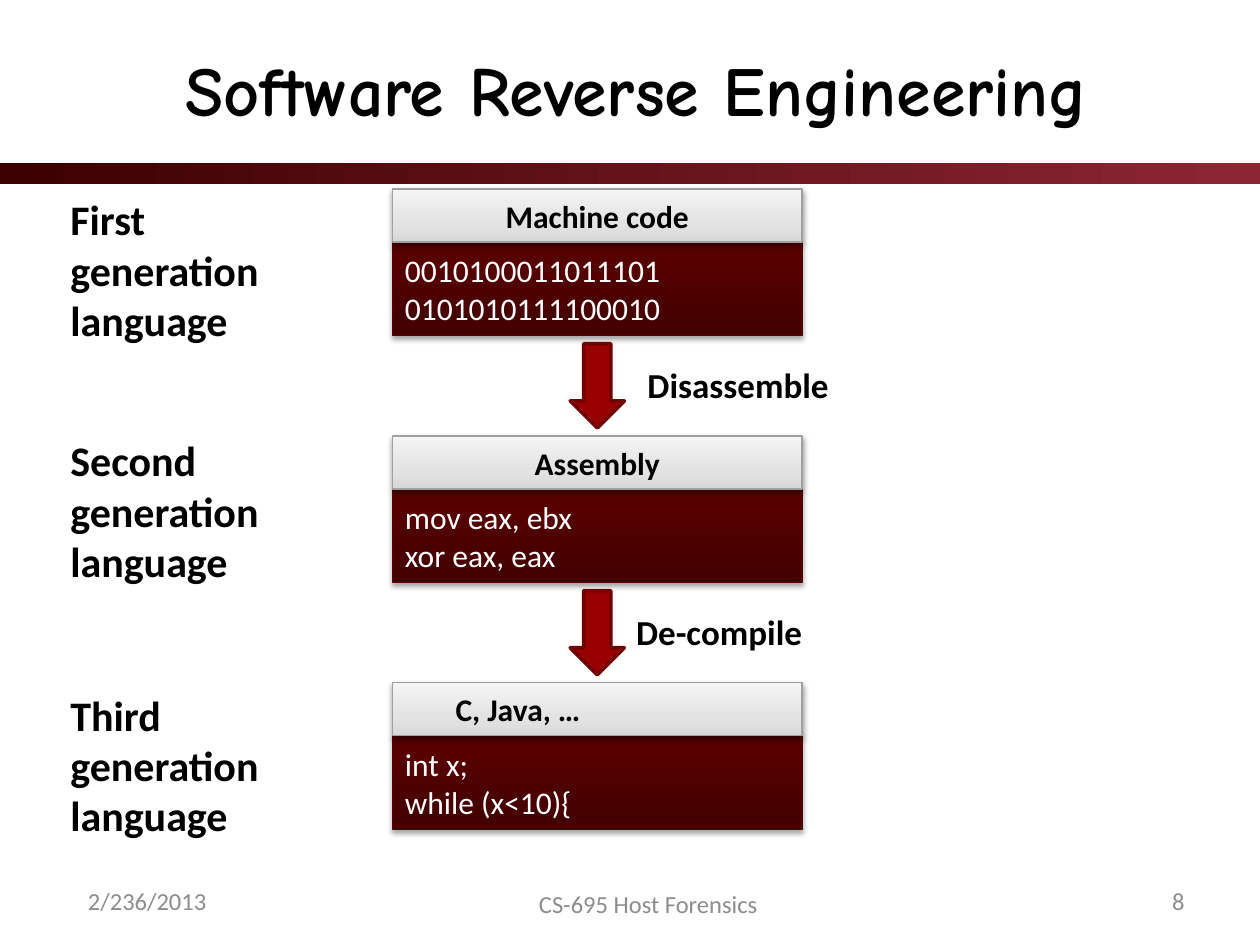
from lxml.etree import SubElement
from pptx import Presentation
from pptx.dml.color import RGBColor
from pptx.enum.shapes import MSO_SHAPE
from pptx.enum.text import MSO_ANCHOR, PP_ALIGN
from pptx.oxml import parse_xml
from pptx.oxml.ns import nsdecls, qn
from pptx.util import Pt

THEME = {
    "font": "Calibri", "title_font": "Comic Neue",
    "black": "000000", "white": "FFFFFF", "gray": "8C8C8C",
    "arrow": "990000", "arrow_line": "710000",
    "code_line": "570000", "head_line": "A0A0A0",
    "bar": [(0, "3C0000"), (100, "8C2633")],
    "code": [(0, "420000"), (80, "560000"), (100, "570000")],
    "head": [(0, "D8D8D8"), (35, "E3E3E3"), (100, "F4F4F4")],
    "title_size": 40, "label_size": 24, "step_size": 20,
    "box_size": 18, "footer_size": 14,
}


def write(s, lines, size, color="black", font="font", bold=False,
          align=PP_ALIGN.LEFT, anchor=MSO_ANCHOR.MIDDLE, wrap=True, left=7.2):
    tf = s.text_frame
    tf.word_wrap = wrap
    tf.vertical_anchor = anchor
    tf.margin_left = Pt(left)
    for i, line in enumerate(lines):
        p = tf.paragraphs[0] if i == 0 else tf.add_paragraph()
        p.alignment = align
        r = p.add_run()
        r.text = line
        r.font.name = THEME[font]
        r.font.size = Pt(THEME[size])
        r.font.bold = bold
        r.font.color.rgb = RGBColor.from_string(THEME[color])


def add_box(left, top, width, height, stops, angle, line=None, shadow=None):
    """Add a gradient rectangle; shadow is (opacity in percent, distance in points)."""
    s = sp.add_shape(MSO_SHAPE.RECTANGLE, Pt(left), Pt(top), Pt(width), Pt(height))
    s.shadow.inherit = False
    s.fill.gradient()
    grad = s._element.spPr.find(qn("a:gradFill"))
    gs_lst = grad.find(qn("a:gsLst"))
    for gs in list(gs_lst):
        gs_lst.remove(gs)
    for pos, color in THEME[stops]:
        gs = SubElement(gs_lst, qn("a:gs"), pos=str(pos * 1000))
        SubElement(gs, qn("a:srgbClr"), val=color)
    grad.find(qn("a:lin")).set("ang", str(angle * 60000))
    if line:
        s.line.color.rgb = RGBColor.from_string(THEME[line])
        s.line.width = Pt(0.75)
    else:
        s.line.fill.background()
    if shadow:
        opacity, dist = shadow
        s._element.spPr.find(qn("a:effectLst")).append(parse_xml(
            f'<a:outerShdw {nsdecls("a")} blurRad="{Pt(3.1)}" dist="{Pt(dist)}" '
            f'dir="5400000" rotWithShape="0"><a:srgbClr val="{THEME["black"]}">'
            f'<a:alpha val="{opacity * 1000}"/></a:srgbClr></a:outerShdw>'))
    return s


prs = Presentation()
prs.slide_width, prs.slide_height = Pt(720), Pt(540)
slide = prs.slides.add_slide(prs.slide_layouts[5])
sp = slide.shapes

add_box(0, 93.2, 720, 12.2, "bar", 0)

title = sp.title
title.left, title.top, title.width, title.height = Pt(43.2), Pt(10.8), Pt(640.8), Pt(79.2)
write(title, ["Software Reverse Engineering"], "title_size", font="title_font",
      bold=True, align=PP_ALIGN.CENTER)

footers = [
    ("2/236/2013", 43.2, 500.4, 131.8, PP_ALIGN.LEFT),
    ("CS-695 Host Forensics", 280.8, 501.8, 179.3, PP_ALIGN.CENTER),
    ("8", 552.2, 500.4, 131.8, PP_ALIGN.RIGHT),
]
for text, left, top, width, align in footers:
    s = sp.add_textbox(Pt(left), Pt(top), Pt(width), Pt(28.8))
    write(s, [text], "footer_size", color="gray", align=align)

# Each level: ordinal, label top, heading, heading alignment and inset, code
levels = [
    ("First", 107.3, "Machine code", PP_ALIGN.CENTER, 7.2,
     ["0010100011011101", "0101010111100010"]),
    ("Second", 244.8, "Assembly", PP_ALIGN.CENTER, 7.2,
     ["mov eax, ebx", "xor eax, eax"]),
    ("Third", 390.2, "C, Java, …", PP_ALIGN.LEFT, 36,
     ["int x;", "while (x<10){"]),
]
box_left, box_width, first_top, pitch = 224.3, 234, 108, 141.1
head_height, code_height = 30.3, 53.5
for i, (ordinal, label_top, heading, align, inset, code) in enumerate(levels):
    top = first_top + i * pitch
    s = add_box(box_left, top + head_height, box_width, code_height, "code", 270,
                line="code_line", shadow=(35, 1.8))
    write(s, code, "box_size", color="white")
    s = add_box(box_left, top, box_width, head_height, "head", 270,
                line="head_line", shadow=(38, 1.6))
    write(s, [heading], "box_size", bold=True, align=align, left=inset)
    s = sp.add_textbox(Pt(33.1), Pt(label_top), Pt(128.9), Pt(94.3))
    write(s, [ordinal, "generation", "language"], "label_size", bold=True,
          anchor=MSO_ANCHOR.TOP, wrap=False)

steps = [("Disassemble", 362.9, 118.8), ("De-compile", 356.4, 110.2)]
arrow_width = 31
for i, (text, left, width) in enumerate(steps):
    top = first_top + i * pitch + 88.4
    s = sp.add_shape(MSO_SHAPE.DOWN_ARROW, Pt(box_left + (box_width - arrow_width) / 2),
                     Pt(top), Pt(arrow_width), Pt(48.2))
    s.shadow.inherit = False
    s.fill.solid()
    s.fill.fore_color.rgb = RGBColor.from_string(THEME["arrow"])
    s.line.color.rgb = RGBColor.from_string(THEME["arrow_line"])
    s.line.width = Pt(2)
    s = sp.add_textbox(Pt(left), Pt(top + 8), Pt(width), Pt(31.7))
    write(s, [text], "step_size", bold=True, anchor=MSO_ANCHOR.TOP, wrap=False)

prs.save("out.pptx")
